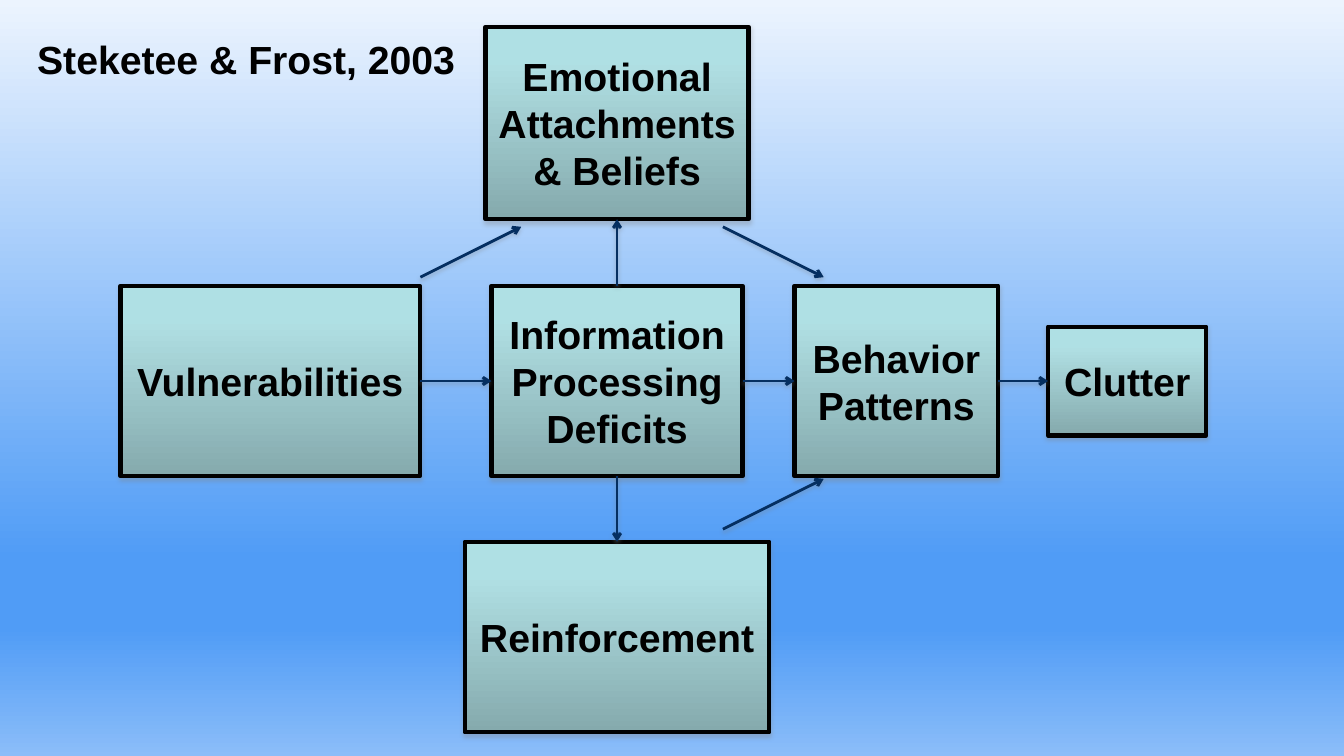
from dataclasses import dataclass
from lxml import etree
from pptx import Presentation
from pptx import util as u
from pptx.dml.color import RGBColor
from pptx.enum import shapes, text
from pptx.oxml.ns import qn


@dataclass(frozen=True)
class Theme:
    font: str = "Arial"
    size: int = 28
    ink: str = "000000"
    arrow: str = "052F61"
    shade: str = "808080"
    edge: float = 3
    stroke: float = 2
    sky: tuple = ((0, "ECF4FE"), (74, "509CF6"), (83, "509CF6"), (100, "8BBDF9"))
    teal: tuple = ((0, "AFE0E4"), (20, "AFDEE2"), (100, "85AAAD"))


THEME = Theme()
TOP, LEFT, BASE, RIGHT = range(4)
MID, ROW = 6.12, 3.78
BOXES = {
    "Information Processing Deficits": (MID, ROW, 2.49, 1.89),
    "Emotional Attachments & Beliefs": (MID, 1.22, 2.61, 1.91),
    "Behavior Patterns": (8.89, ROW, 2.02, 1.89),
    "Clutter": (11.18, ROW, 1.57, 1.08),
    "Reinforcement ": (MID, 6.32, 3.02, 1.89),
    "Vulnerabilities": (2.68, ROW, 2.97, 1.89),
}
SLANTS = [
    (4.17, 2.75, 5.17, 2.25),
    (7.17, 2.25, 8.17, 2.75),
    (7.17, 5.25, 8.17, 4.75),
]


def blend(fill, root, stops):
    fill.gradient()
    fill.gradient_angle = 270
    ramp = next(root.iter(qn("a:gsLst")))
    for stop in list(ramp):
        ramp.remove(stop)
    for place, color in stops:
        stop = etree.SubElement(ramp, qn("a:gs"), pos=str(place * 1000))
        etree.SubElement(stop, qn("a:srgbClr"), val=color)


def shadow(props, drop, alpha):
    effect = props.find(qn("a:effectLst"))
    if effect is None:
        effect = etree.SubElement(props, qn("a:effectLst"))
    outer = etree.SubElement(
        effect, qn("a:outerShdw"), blurRad=str(u.Pt(3.1)),
        dist=str(u.Pt(drop)), dir="5400000", rotWithShape="0")
    color = etree.SubElement(outer, qn("a:srgbClr"), val=THEME.shade)
    etree.SubElement(color, qn("a:alpha"), val=str(alpha * 1000))


def outline(line, color, width):
    line.color.rgb = RGBColor.from_string(color)
    line.width = u.Pt(width)


def write(frame, words, align):
    para = frame.paragraphs[0]
    para.text = words
    para.alignment = align
    font = para.font
    font.name, font.size, font.bold = THEME.font, u.Pt(THEME.size), True
    font.color.rgb = RGBColor.from_string(THEME.ink)


def box(slide, words, mid_x, mid_y, wide, high):
    shape = slide.shapes.add_shape(
        shapes.MSO_SHAPE.RECTANGLE, u.Inches(mid_x - wide / 2),
        u.Inches(mid_y - high / 2), u.Inches(wide), u.Inches(high))
    shape.shadow.inherit = False
    blend(shape.fill, shape.element, THEME.teal)
    outline(shape.line, THEME.ink, THEME.edge)
    shadow(shape.element.spPr, 1.8, 35)
    shape.text_frame.word_wrap = True
    shape.text_frame.vertical_anchor = text.MSO_ANCHOR.MIDDLE
    write(shape.text_frame, words, text.PP_ALIGN.CENTER)
    return shape


def arrow(slide, x1=0, y1=0, x2=0, y2=0):
    link = slide.shapes.add_connector(
        shapes.MSO_CONNECTOR.STRAIGHT, *map(u.Inches, (x1, y1, x2, y2)))
    outline(link.line, THEME.arrow, THEME.stroke)
    props = link.element.spPr
    etree.SubElement(props.find(qn("a:ln")), qn("a:tailEnd"), type="arrow")
    shadow(props, 1.6, 38)
    return link


def join(slide, start, side, end, face):
    link = arrow(slide)
    link.begin_connect(start, side)
    link.end_connect(end, face)


def label(slide, words, left, top, wide, high):
    area = slide.shapes.add_textbox(*map(u.Inches, (left, top, wide, high)))
    area.text_frame.word_wrap = False
    area.text_frame.auto_size = text.MSO_AUTO_SIZE.SHAPE_TO_FIT_TEXT
    write(area.text_frame, words, text.PP_ALIGN.LEFT)


def main():
    deck = Presentation()
    deck.slide_width, deck.slide_height = u.Inches(13.33), u.Inches(7.5)
    slide = deck.slides.add_slide(deck.slide_layouts[6])
    blend(slide.background.fill, slide.element, THEME.sky)

    info, belief, habit, clutter, reward, risk = [
        box(slide, words, *place) for words, place in BOXES.items()]
    chain = [risk, info, habit, clutter]
    for start, end in zip(chain, chain[1:]):
        join(slide, start, RIGHT, end, LEFT)
    join(slide, info, TOP, belief, BASE)
    join(slide, info, BASE, reward, TOP)
    for ends in SLANTS:
        arrow(slide, *ends)

    label(slide, "Steketee & Frost, 2003", 0.27, 0.3, 4.4, 0.57)
    deck.save("out.pptx")


if __name__ == "__main__":
    main()
